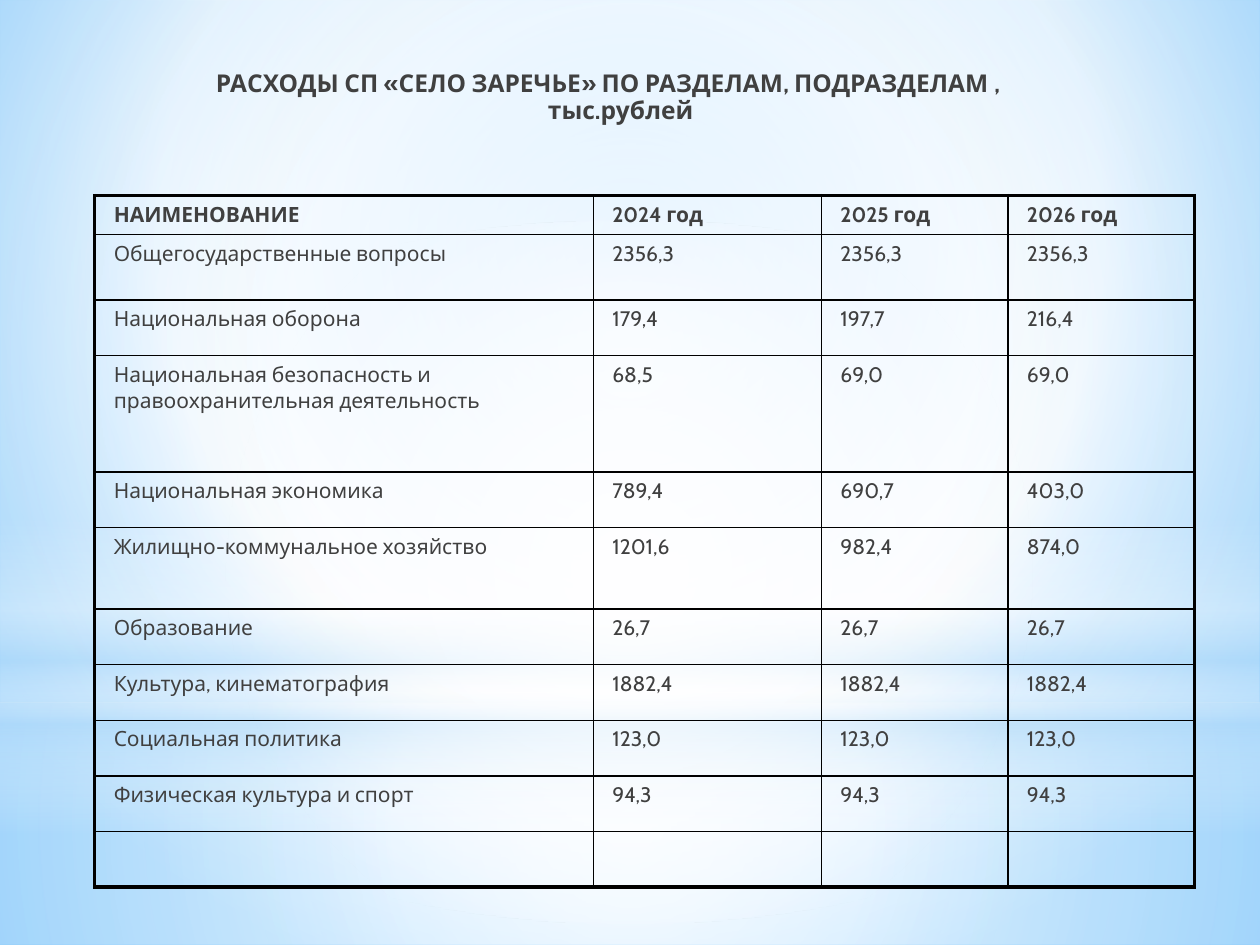
from lxml import etree
from pptx import Presentation
from pptx import util as u
from pptx.dml.color import RGBColor
from pptx.enum import shapes, text
from pptx.oxml.ns import qn

HEADER = ["НАИМЕНОВАНИЕ", "2024 год", "2025 год", "2026 год"]
EXPENSES = [
    ["Общегосударственные вопросы", "2356,3", "2356,3", "2356,3"],
    ["Национальная оборона", "179,4", "197,7", "216,4"],
    ["Национальная безопасность и правоохранительная деятельность", "68,5", "69,0", "69,0"],
    ["Национальная экономика", "789,4", "690,7", "403,0"],
    ["Жилищно-коммунальное хозяйство", "1201,6", "982,4", "874,0"],
    ["Образование", "26,7", "26,7", "26,7"],
    ["Культура, кинематография", "1882,4", "1882,4", "1882,4"],
    ["Социальная политика", "123,0", "123,0", "123,0"],
    ["Физическая культура и спорт", "94,3", "94,3", "94,3"],
    ["", "", "", ""],
]
COLUMN_WIDTHS = [10.05, 4.6, 3.76, 3.76]
ROW_HEIGHTS = [0.79, 1.32, 1.12, 2.34, 1.12, 1.65] + [1.12] * 5
CENTRE = (50, 50, 50, 50)


def color(value):
    return RGBColor.from_string(value)


def add_child(parent, tag, **attributes):
    child = etree.SubElement(parent, qn(tag))
    for name, value in attributes.items():
        child.set(name, str(value))
    return child


class SlideBuilder:
    """Holds the shared style and the slide being built."""

    font = "Cabin"
    ink = "404040"
    border = "000000"

    def __init__(self, presentation):
        self.slide = presentation.slides.add_slide(presentation.slide_layouts[5])

    def gradient(self, fill, owner, stops, focus=None):
        fill.gradient()
        gradient = owner.find(".//" + qn("a:gradFill"))
        for child in list(gradient):
            gradient.remove(child)
        stop_list = add_child(gradient, "a:gsLst")
        for position, value, opacity in stops:
            stop = add_child(stop_list, "a:gs", pos=position * 1000)
            swatch = add_child(stop, "a:srgbClr", val=value)
            add_child(swatch, "a:alpha", val=opacity * 1000)
        if focus is None:
            add_child(gradient, "a:lin", ang=90 * 60000, scaled=0)
        else:
            circle = add_child(gradient, "a:path", path="circle")
            sides = {side: share * 1000 for side, share in zip("ltrb", focus)}
            add_child(circle, "a:fillToRect", **sides)

    def background(self, stops, focus):
        self.gradient(self.slide.background.fill, self.slide.element, stops, focus)

    def glow(self, kind, top, height, stops, focus=None):
        shape = self.slide.shapes.add_shape(kind, 0, u.Cm(top), u.Cm(25.4), u.Cm(height))
        shape.shadow.inherit = False
        shape.line.fill.background()
        self.gradient(shape.fill, shape.element, stops, focus)

    def style(self, paragraph, size, bold, left, indent=0):
        paragraph.space_before = u.Pt(size * 0.2)
        paragraph.space_after = u.Pt(3)
        properties = paragraph._p.get_or_add_pPr()
        properties.set("marL", str(u.Cm(left)))
        properties.set("indent", str(u.Cm(indent)))
        for run in paragraph.runs:
            run.font.name = self.font
            run.font.size = u.Pt(size)
            run.font.bold = bold
            run.font.color.rgb = color(self.ink)

    def title(self, wording, left, top, width, height):
        title = self.slide.shapes.title
        self.slide.shapes.element.append(title.element)
        title.left, title.top = u.Cm(left), u.Cm(top)
        title.width, title.height = u.Cm(width), u.Cm(height)
        frame = title.text_frame
        frame.text = wording
        frame.word_wrap = True
        frame.auto_size = text.MSO_AUTO_SIZE.NONE
        frame.vertical_anchor = text.MSO_ANCHOR.TOP
        paragraph = frame.paragraphs[0]
        paragraph.alignment = text.PP_ALIGN.CENTER
        paragraph.line_spacing = 0.9
        self.style(paragraph, 14, True, 0.64, -0.51)

    def cell_borders(self, cell, outer_sides):
        properties = cell._tc.get_or_add_tcPr()
        for side in "LRTB":
            width = u.Pt(2.25 if side in outer_sides else 1)
            line = add_child(properties, f"a:ln{side}", w=int(width))
            add_child(add_child(line, "a:solidFill"), "a:srgbClr", val=self.border)

    def table(self, rows, left, top):
        last_row, last_column = len(rows) - 1, len(COLUMN_WIDTHS) - 1
        table = self.slide.shapes.add_table(
            len(rows), len(COLUMN_WIDTHS), u.Cm(left), u.Cm(top),
            u.Cm(sum(COLUMN_WIDTHS)), u.Cm(sum(ROW_HEIGHTS))).table
        table.first_row = table.horz_banding = False
        for column, width in zip(table.columns, COLUMN_WIDTHS):
            column.width = u.Cm(width)
        for row, height in zip(table.rows, ROW_HEIGHTS):
            row.height = u.Cm(height)
        for i, values in enumerate(rows):
            for j, value in enumerate(values):
                cell = table.cell(i, j)
                cell.text_frame.text = value
                self.style(cell.text_frame.paragraphs[0], 12, i == 0, 0.13)
                edges = {"L": j == 0, "R": j == last_column, "T": i == 0, "B": i == last_row}
                self.cell_borders(cell, [side for side, is_outer in edges.items() if is_outer])
                cell.fill.background()


def main():
    presentation = Presentation()
    presentation.slide_width, presentation.slide_height = u.Cm(25.4), u.Cm(19.05)
    builder = SlideBuilder(presentation)
    rectangle, oval = shapes.MSO_SHAPE.RECTANGLE, shapes.MSO_SHAPE.OVAL
    white, blue = "FFFFFF", "B4DCFA"
    builder.background(
        [(0, "9ED5FF", 100), (60, white, 100), (100, "5BB9FF", 100)], (20, 10, 20, 60))
    builder.glow(rectangle, 14.17, 4.88,
                 [(0, white, 91), (37, white, 76), (100, blue, 79)], CENTRE)
    builder.glow(rectangle, 0, 14.17,
                 [(0, white, 89), (48, white, 62), (100, blue, 79)], CENTRE)
    builder.glow(rectangle, 10.46, 6.35,
                 [(0, white, 0), (29, white, 30), (45, blue, 40),
                  (55, white, 26), (65, blue, 60), (100, white, 0)])
    builder.glow(oval, 4.45, 14.17, [(0, white, 100), (56, white, 0)], CENTRE)
    builder.title("РАСХОДЫ СП «СЕЛО ЗАРЕЧЬЕ» ПО РАЗДЕЛАМ, ПОДРАЗДЕЛАМ , тыс.рублей",
                  3.3, 1.32, 17.78, 2.21)
    builder.table([HEADER] + EXPENSES, 1.91, 3.94)
    presentation.save("out.pptx")


if __name__ == "__main__":
    main()
